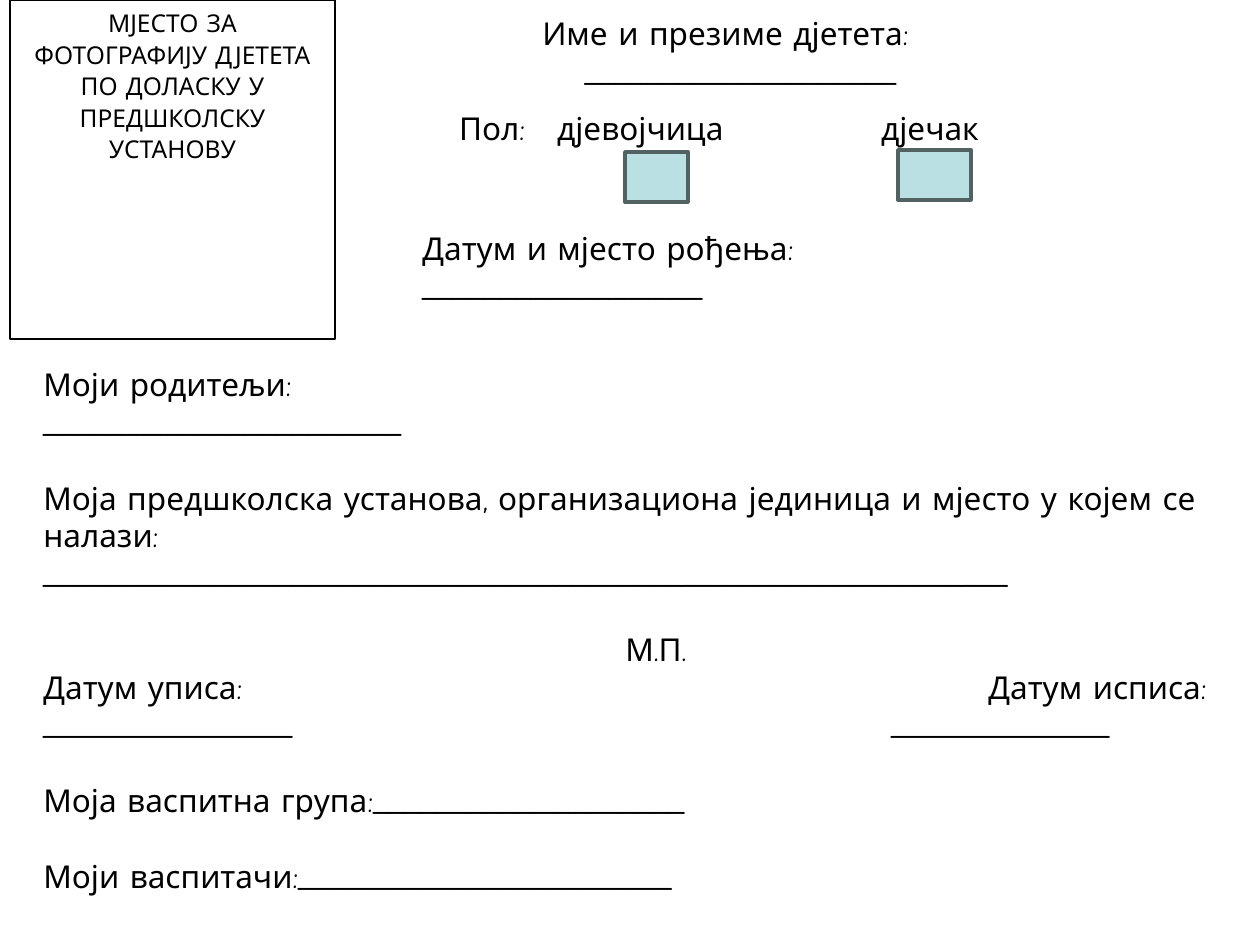
"""Build the personal data page of a preschool child's booklet."""
from dataclasses import dataclass

import pptx
import pptx.dml.color
import pptx.enum.shapes
import pptx.enum.text
import pptx.oxml.ns
import pptx.util
from lxml import etree

SCALE = 914400 / 126
CENTER = pptx.enum.text.PP_ALIGN.CENTER
LEFT = pptx.enum.text.PP_ALIGN.LEFT


@dataclass(frozen=True)
class Theme:
    """Colours, font and type sizes of the form."""
    font: str = "Comic Neue"
    ink: str = "000000"
    paper: str = "FFFFFF"
    tick_fill: str = "BBE0E3"
    tick_line: str = "526263"
    small: int = 14
    normal: int = 18
    gap: float = 21.6


def px(n):
    """Turn pixels into EMU."""
    return pptx.util.Emu(round(n * SCALE))


def rgb(value):
    """Turn a hex string into a colour."""
    return pptx.dml.color.RGBColor.from_string(value)


def write(p, text, *, font, size, color, align=LEFT, before=0, after=0, spacing=1.0, tabs=()):
    """Fill a paragraph with one formatted run."""
    p.alignment = align
    p.space_before = pptx.util.Pt(before)
    p.space_after = pptx.util.Pt(after)
    p.line_spacing = spacing
    if tabs:
        qn = pptx.oxml.ns.qn
        stops = etree.SubElement(p._p.get_or_add_pPr(), qn("a:tabLst"))
        for stop in tabs:
            etree.SubElement(stops, qn("a:tab"), pos=str(px(stop)), algn="l")
    r = p.add_run()
    r.text = text
    r.font.name = font
    r.font.size = pptx.util.Pt(size)
    r.font.color.rgb = rgb(color)


class Form:
    """Draws the form's elements on the current slide."""

    def __init__(self, slide, theme):
        """Keep the slide and the theme."""
        self.s, self.theme = slide, theme

    def fill_in(self, tf, lines, size):
        """Write (text, format) lines into a text frame."""
        tf.word_wrap = True
        tf.vertical_anchor = pptx.enum.text.MSO_ANCHOR.TOP
        for i, (text, style) in enumerate(lines):
            p = tf.add_paragraph() if i else tf.paragraphs[0]
            write(p, text, font=self.theme.font, size=size, color=self.theme.ink, **style)

    def box(self, x, y, w, h, fill, line, weight):
        """Add an outlined rectangle."""
        sp = self.s.shapes.add_shape(
            pptx.enum.shapes.MSO_SHAPE.RECTANGLE, px(x), px(y), px(w), px(h))
        sp.shadow.inherit = False
        sp.fill.solid()
        sp.fill.fore_color.rgb = rgb(fill)
        sp.line.color.rgb = rgb(line)
        sp.line.width = pptx.util.Pt(weight)
        return sp

    def photo_place(self, x, y, w, h, text):
        """Add the frame reserved for the photograph."""
        sp = self.box(x, y, w, h, self.theme.paper, self.theme.ink, 0.75)
        style = dict(align=CENTER, spacing=1.07, after=8)
        self.fill_in(sp.text_frame, [(text, style)], self.theme.small)

    def tick_box(self, x, y, w, h):
        """Add a box to tick."""
        self.box(x, y, w, h, self.theme.tick_fill, self.theme.tick_line, 2)

    def text(self, x, y, w, h, lines, inset=None):
        """Add a text box of form lines."""
        tf = self.s.shapes.add_textbox(px(x), px(y), px(w), px(h)).text_frame
        if inset is not None:
            tf.margin_left = px(inset)
        self.fill_in(tf, lines, self.theme.normal)
        tf.auto_size = pptx.enum.text.MSO_AUTO_SIZE.SHAPE_TO_FIT_TEXT


def main():
    """Build and save the slide."""
    prs = pptx.Presentation()
    prs.slide_width, prs.slide_height = pptx.util.Inches(10), pptx.util.Inches(7.5)
    theme = Theme()
    form = Form(prs.slides.add_slide(prs.slide_layouts[6]), theme)
    gap = dict(before=theme.gap)

    form.photo_place(10, 0, 325, 339,
                     "МЈЕСТО ЗА ФОТОГРАФИЈУ ДЈЕТЕТА ПО ДОЛАСКУ У ПРЕДШКОЛСКУ УСТАНОВУ")
    form.text(530, 8, 421, 89, [("Име и презиме дјетета:", {}),
                                ("_" * 20, dict(align=CENTER))])
    form.text(388, 103, 661, 50, [("Пол:\tдјевојчица\tдјечак", dict(tabs=(98, 422)))], inset=71)
    form.tick_box(625, 152, 63, 50)
    form.tick_box(898, 150, 73, 50)
    form.text(410, 223, 567, 89, [("Датум и мјесто рођења:", {}), ("_" * 18, {})])
    form.text(31, 359, 1250, 585, [
        ("Моји родитељи:", {}),
        ("_" * 23, {}),
        ("Моја предшколска установа, организациона јединица и мјесто у којем се налази:", gap),
        ("_" * 62, {}),
        ("М.П.", dict(align=CENTER, **gap)),
        ("Датум уписа:\tДатум исписа:", dict(tabs=(945,))),
        ("_" * 16 + "\t" + "_" * 14, dict(tabs=(848,))),
        ("Моја васпитна група:" + "_" * 20, gap),
        ("Моји васпитачи:" + "_" * 24, gap),
    ])
    prs.save("out.pptx")


if __name__ == "__main__":
    main()
